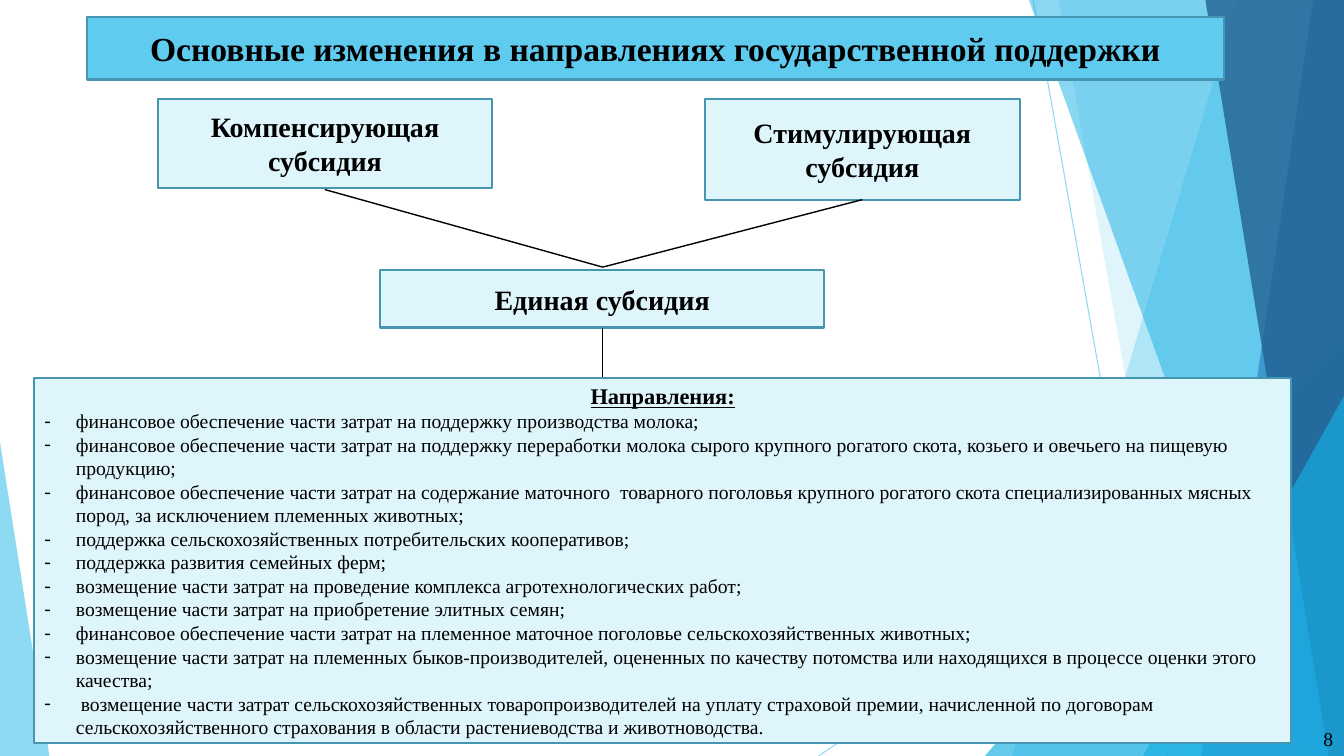
from dataclasses import dataclass

from lxml import etree
from pptx import Presentation
from pptx.dml.color import RGBColor
from pptx.enum.shapes import MSO_CONNECTOR, MSO_SHAPE
from pptx.enum.text import MSO_ANCHOR, MSO_AUTO_SIZE, PP_ALIGN
from pptx.oxml.ns import qn
from pptx.util import Pt

RECTANGLE, TRIANGLE = MSO_SHAPE.RECTANGLE, MSO_SHAPE.ISOSCELES_TRIANGLE
STRAIGHT = MSO_CONNECTOR.STRAIGHT
CENTER, LEFT = PP_ALIGN.CENTER, PP_ALIGN.LEFT
MIDDLE = MSO_ANCHOR.MIDDLE
FIXED_SIZE = MSO_AUTO_SIZE.NONE

BLACK = RGBColor(0x00, 0x00, 0x00)
SKY = RGBColor(0x5F, 0xCB, 0xEF)
PALE_SKY = RGBColor(0xDF, 0xF5, 0xFC)
BORDER = RGBColor(0x46, 0x96, 0xB1)
AZURE = RGBColor(0x17, 0xB0, 0xE4)
BLUE = RGBColor(0x2E, 0x83, 0xC3)
NAVY = RGBColor(0x22, 0x62, 0x92)

FONT = "Times New Roman"
WIDTH, HEIGHT = 960, 540
ITEM_INDENT = 22.5


@dataclass
class Band:
    """A slanted area that reaches the right edge of the slide."""
    top_x: float
    bottom_x: float
    color: RGBColor
    opacity: int


@dataclass
class Corner:
    """A right triangle standing on the bottom edge of the slide."""
    left: float
    top: float
    width: float
    apex: int
    color: RGBColor
    opacity: int


@dataclass
class Box:
    left: float
    top: float
    width: float
    height: float
    text: str = ""


@dataclass
class Link:
    x1: float
    y1: float
    x2: float
    y2: float
    color: RGBColor = BLACK
    weight: float = 1
    opacity: int = 100


DECOR = [
    Link(738, 0, 834, HEIGHT, SKY, 0.75, 70),
    Link(WIDTH, 290, 584.6, HEIGHT, SKY, 0.75, 70),
    Band(884, 723, SKY, 36),
    Band(756, 852, SKY, 20),
    Corner(703.5, 240, 256.5, 1, AZURE, 66),
    Band(735, 929.5, AZURE, 50),
    Band(938, 858, BLUE, 70),
    Band(861, 949, NAVY, 80),
    Corner(816.5, 283, 143.5, 1, AZURE, 66),
    Corner(0, 316, 35.3, 0, SKY, 70),
]
SUBSIDIES = [
    Box(113, 70.6, 238.3, 63.4, "Компенсирующая субсидия"),
    Box(503.3, 70.6, 225.4, 72, "Стимулирующая субсидия"),
    Box(271.4, 193, 317.5, 41, "Единая субсидия"),
]
LINKS = [
    Link(232, 135.4, 430.5, 190.8),
    Link(616, 142.6, 430.5, 190.8),
    Link(430.5, 234, 430.5, 289.4),
]
TITLE_BOX = Box(61.9, 12.2, 812.2, 44.6)
DIRECTIONS_BOX = Box(24.5, 270, 897.8, 260.6)
DIRECTIONS = [
    "финансовое обеспечение части затрат на поддержку производства молока;",
    "финансовое обеспечение части затрат на поддержку переработки молока сырого крупного рогатого скота, "
    "козьего и овечьего на пищевую продукцию;",
    "финансовое обеспечение части затрат на содержание маточного  товарного поголовья крупного рогатого скота "
    "специализированных мясных пород, за исключением племенных животных;",
    "поддержка сельскохозяйственных потребительских кооперативов;",
    "поддержка развития семейных ферм;",
    "возмещение части затрат на проведение комплекса агротехнологических работ;",
    "возмещение части затрат на приобретение элитных семян;",
    "финансовое обеспечение части затрат на племенное маточное поголовье сельскохозяйственных животных;",
    "возмещение части затрат на племенных быков-производителей, оцененных по качеству потомства или "
    "находящихся в процессе оценки этого качества;",
    " возмещение части затрат сельскохозяйственных товаропроизводителей на уплату страховой премии, "
    "начисленной по договорам сельскохозяйственного страхования в области растениеводства и животноводства.",
]


def set_opacity(properties, percent: int) -> None:
    """Make the solid colour inside a fill or line element partly transparent."""
    color = next(properties.iter(qn("a:srgbClr")))
    etree.SubElement(color, qn("a:alpha")).set("val", str(percent * 1000))


def draw_link(page, link: Link) -> None:
    ends = (Pt(value) for value in (link.x1, link.y1, link.x2, link.y2))
    line = page.shapes.add_connector(STRAIGHT, *ends)
    line.line.color.rgb = link.color
    line.line.width = Pt(link.weight)
    properties = line.element.spPr
    if link.opacity < 100:
        set_opacity(properties, link.opacity)
    etree.SubElement(properties, qn("a:effectLst"))


def draw_decor(page, item: Link | Band | Corner) -> None:
    if isinstance(item, Link):
        draw_link(page, item)
        return
    if isinstance(item, Band):
        outline = page.shapes.build_freeform(Pt(item.top_x), 0)
        corners = [(WIDTH, 0), (WIDTH, HEIGHT), (item.bottom_x, HEIGHT)]
        outline.add_line_segments([(Pt(x), Pt(y)) for x, y in corners])
        shape = outline.convert_to_shape()
    else:
        shape = page.shapes.add_shape(TRIANGLE, Pt(item.left), Pt(item.top), Pt(item.width), Pt(HEIGHT - item.top))
        shape.adjustments[0] = item.apex
    shape.shadow.inherit = False
    shape.fill.solid()
    shape.fill.fore_color.rgb = item.color
    set_opacity(shape.element.spPr, item.opacity)
    shape.line.fill.background()


def write(frame, text: str, *, size: float, bold: bool = False, underline: bool = False,
          align=CENTER, bullet: str = "", first: bool = True) -> None:
    """Write one paragraph, the first of the frame or one added at its end."""
    para = frame.paragraphs[0] if first else frame.add_paragraph()
    para.alignment = align
    para.space_before = Pt(0)
    span = para.add_run()
    span.text = text
    font = span.font
    font.name, font.size, font.bold, font.underline = FONT, Pt(size), bold, underline
    font.color.rgb = BLACK
    properties = para._p.get_or_add_pPr()
    indent = Pt(ITEM_INDENT) if bullet else 0
    properties.set("marL", str(indent))
    properties.set("indent", str(-indent))
    if bullet:
        etree.SubElement(properties, qn("a:buFont")).set("typeface", FONT)
        etree.SubElement(properties, qn("a:buChar")).set("char", bullet)
    else:
        etree.SubElement(properties, qn("a:buNone"))


def style_panel(shape, box: Box, color: RGBColor):
    """Place and colour a framed panel, and return its text frame."""
    shape.left, shape.top = Pt(box.left), Pt(box.top)
    shape.width, shape.height = Pt(box.width), Pt(box.height)
    shape.fill.solid()
    shape.fill.fore_color.rgb = color
    shape.line.color.rgb = BORDER
    shape.line.width = Pt(1.5)
    frame = shape.text_frame
    frame.word_wrap = True
    frame.auto_size = FIXED_SIZE
    frame.vertical_anchor = MIDDLE
    return frame


def main() -> None:
    deck = Presentation()
    deck.slide_width, deck.slide_height = Pt(WIDTH), Pt(HEIGHT)
    page = deck.slides.add_slide(deck.slide_layouts[1])
    title, directions = page.placeholders
    for item in DECOR:
        draw_decor(page, item)
    for box in SUBSIDIES:
        shape = page.shapes.add_shape(RECTANGLE, 0, 0, Pt(box.width), Pt(box.height))
        shape.shadow.inherit = False
        write(style_panel(shape, box, PALE_SKY), box.text, size=20, bold=True)
    for link in LINKS:
        draw_link(page, link)

    for placeholder in (directions, title):
        placeholder.element.getparent().append(placeholder.element)
    frame = style_panel(directions, DIRECTIONS_BOX, PALE_SKY)
    write(frame, "Направления:", size=16, bold=True, underline=True)
    for direction in DIRECTIONS:
        write(frame, direction, size=14, align=LEFT, bullet="-", first=False)
    write(style_panel(title, TITLE_BOX, SKY), "Основные изменения в направлениях государственной поддержки",
          size=24, bold=True)

    number = page.shapes.add_textbox(Pt(938.2), Pt(515.5), Pt(21.6), Pt(24.5))
    write(number.text_frame, "8", size=14, align=LEFT)
    deck.save("out.pptx")


if __name__ == "__main__":
    main()
